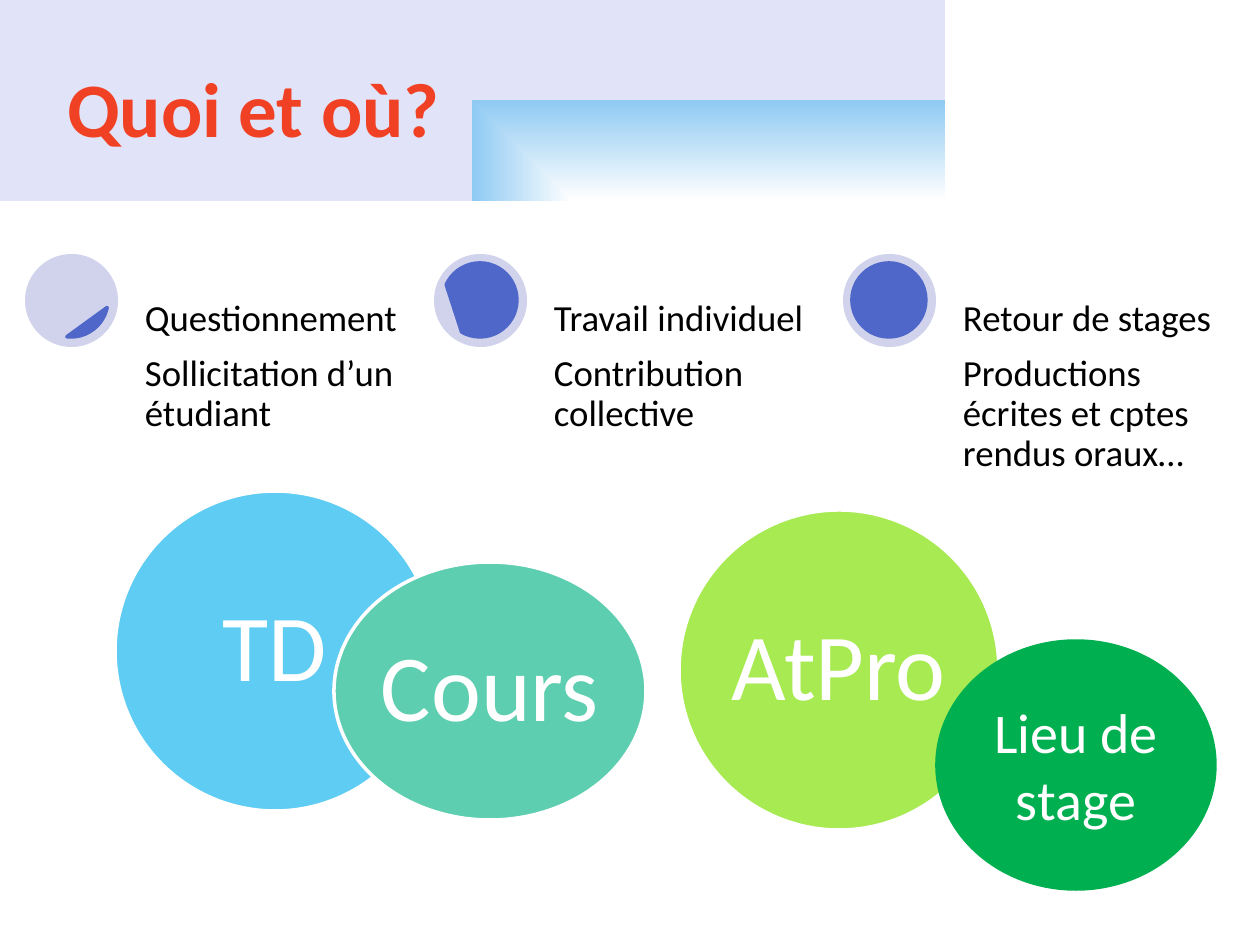
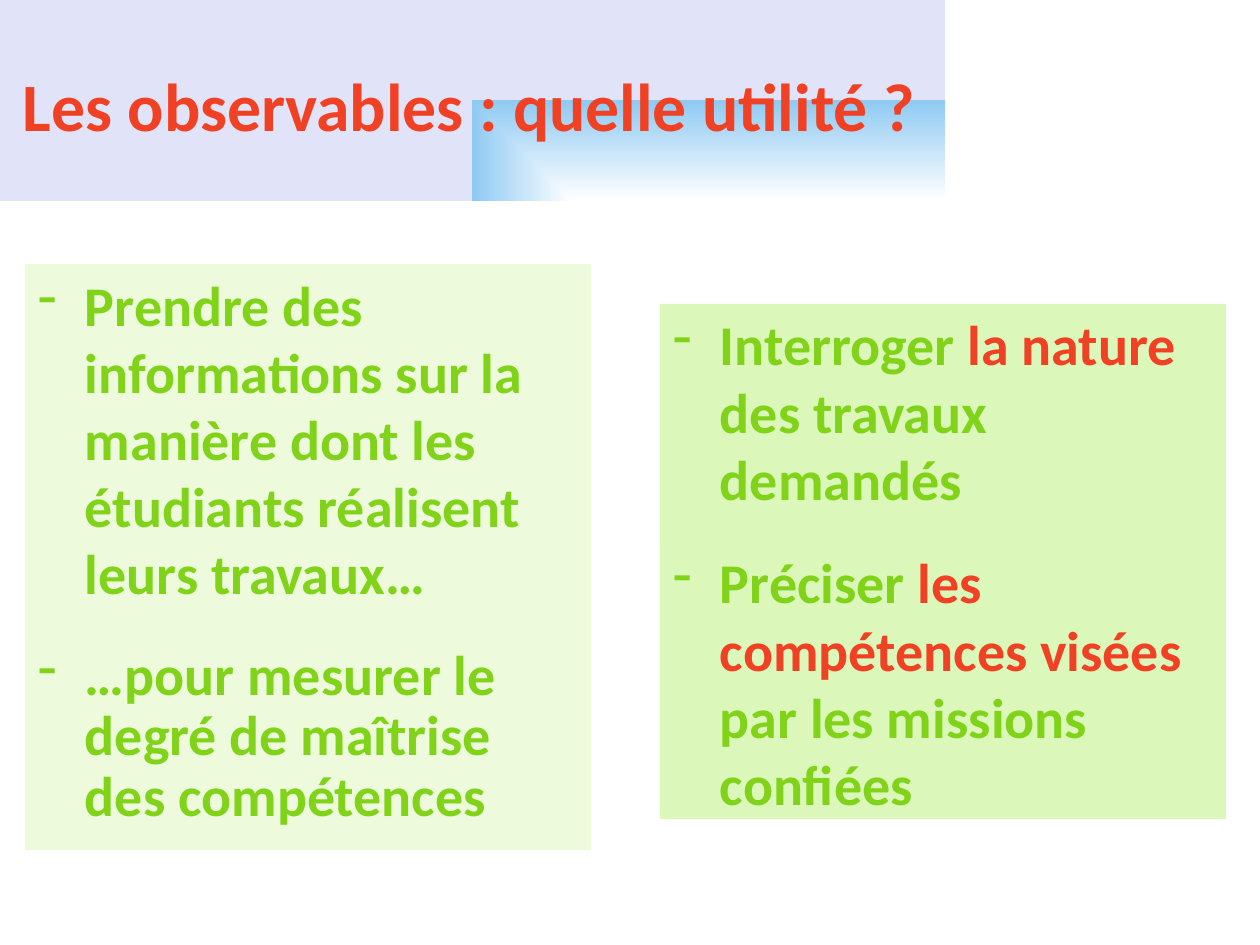
from dataclasses import dataclass

from pptx import Presentation
from pptx.dml.color import RGBColor
from pptx.enum.shapes import MSO_SHAPE
from pptx.enum.text import MSO_ANCHOR, PP_ALIGN
from pptx.oxml import parse_xml
from pptx.oxml.ns import nsdecls, qn
from pptx.util import Pt

RECTANGLE, ELLIPSE, CHORD = MSO_SHAPE.RECTANGLE, MSO_SHAPE.OVAL, MSO_SHAPE.CHORD
TOP, MIDDLE, BOTTOM = MSO_ANCHOR.TOP, MSO_ANCHOR.MIDDLE, MSO_ANCHOR.BOTTOM
LEFT, CENTER = PP_ALIGN.LEFT, PP_ALIGN.CENTER

PX = 914400 / 126
CHORD_UNITS_PER_DEGREE = 0.6
BLANK_LAYOUT = 6


@dataclass(frozen=True)
class Theme:
    font: str = "Calibri"
    white: str = "FFFFFF"
    black: str = "000000"
    accent: str = "F14124"
    green_text: str = "81D31A"
    pale_green: str = "EDFBDC"
    soft_green: str = "DCF7BA"
    sky: str = "5ECCF3"
    lime: str = "A7EA52"
    teal: str = "5DCEAF"
    deep_green: str = "00B050"
    ring: str = "D0D3EB"
    gauge: str = "4E67C8"
    band_stops: tuple = ((0, "FFFFFF"), (100, "8FCAF3"), (100, "C1C7F2"), (100, "E1E3F8"))
    title_size: float = 44
    long_title_size: float = 38.7
    circle_size: float = 54
    body_size: float = 32
    column_size: float = 21
    tight: float = 0.9
    outline: float = 2


def px(length):
    return round(length * PX)


def write(shape, text, *, theme, size, color, bold=False, align=LEFT, anchor=TOP,
          margins=(13, 6), wrap=True, line_spacing=None, dash_indent=0):
    """Fill a shape with one paragraph; text is a string or a list of (text, color) spans."""
    frame = shape.text_frame
    frame.word_wrap = wrap
    frame.vertical_anchor = anchor
    frame.margin_left = frame.margin_right = px(margins[0])
    frame.margin_top = frame.margin_bottom = px(margins[1])
    para = frame.paragraphs[0]
    if dash_indent:
        properties = para._p.get_or_add_pPr()
        properties.set("marL", str(px(dash_indent)))
        properties.set("indent", str(-px(dash_indent)))
        properties.append(parse_xml(f"<a:buFontTx {nsdecls('a')}/>"))
        properties.append(parse_xml(f"<a:buChar {nsdecls('a')} char='-'/>"))
    para.alignment = align
    if line_spacing:
        para.line_spacing = line_spacing
    spans = [(text, color)] if isinstance(text, str) else text
    for words, span_color in spans:
        span = para.add_run()
        span.text = words
        span.font.name = theme.font
        span.font.size = Pt(size)
        span.font.bold = bold
        span.font.color.rgb = RGBColor.from_string(span_color)


class SlideBuilder:
    def __init__(self, deck, theme):
        self.deck = deck
        self.theme = theme
        self.page = None

    def start(self, title, place, size):
        """Open a new page with the shared band and its title."""
        self.page = self.deck.slides.add_slide(self.deck.slide_layouts[BLANK_LAYOUT])
        self.band()
        self.text(title, place, size=size, color=self.theme.accent, bold=True, anchor=MIDDLE)

    def shape(self, kind, place, fill=None, line=None):
        shape = self.page.shapes.add_shape(kind, *map(px, place))
        shape.shadow.inherit = False
        if fill:
            shape.fill.solid()
            shape.fill.fore_color.rgb = RGBColor.from_string(fill)
        else:
            shape.fill.background()
        if line:
            shape.line.color.rgb = RGBColor.from_string(line)
            shape.line.width = Pt(self.theme.outline)
        else:
            shape.line.fill.background()
        return shape

    def band(self):
        shape = self.shape(RECTANGLE, (0, 0, 945, 201))
        stops = "".join(
            f'<a:gs pos="{percent * 1000}"><a:srgbClr val="{color}"/></a:gs>'
            for percent, color in self.theme.band_stops)
        gradient = parse_xml(
            f'<a:gradFill {nsdecls("a")} rotWithShape="1"><a:gsLst>{stops}</a:gsLst>'
            '<a:path path="rect"><a:fillToRect l="100000" t="100000"/></a:path></a:gradFill>')
        properties = shape._element.spPr
        properties.replace(properties.find(qn("a:noFill")), gradient)

    def text(self, text, place, **style):
        box = self.page.shapes.add_textbox(*map(px, place))
        write(box, text, theme=self.theme, **style)

    def circle(self, text, place, fill, line, size, **style):
        shape = self.shape(ELLIPSE, place, fill, line)
        write(shape, text, theme=self.theme, size=size, color=self.theme.white,
              align=CENTER, anchor=MIDDLE, **style)

    def gauge(self, left, top, angles):
        """Draw a ring with a chord that shows how full it is."""
        self.shape(ELLIPSE, (left, top, 93, 93), self.theme.ring)
        level = self.shape(CHORD, (left + 9, top + 9, 74, 74), self.theme.gauge, self.theme.gauge)
        for index, angle in enumerate(angles):
            level.adjustments[index] = angle * CHORD_UNITS_PER_DEGREE

    def column(self, left, top, angles, heading, detail):
        self.gauge(left, top, angles)
        style = dict(size=self.theme.column_size, color=self.theme.black,
                     margins=(8, 8), line_spacing=self.theme.tight)
        self.text(detail, (left + 112, top + 93, 276, 393), **style)
        self.text(heading, (left + 112, top, 276, 93), anchor=BOTTOM, **style)

    def panel(self, text, place, fill, line_spacing=None):
        shape = self.shape(RECTANGLE, place, fill)
        write(shape, text, theme=self.theme, size=self.theme.body_size,
              color=self.theme.green_text, bold=True, line_spacing=line_spacing, dash_indent=47)


def build_what_and_where(builder):
    theme = builder.theme
    builder.start("Quoi et où?", (54, 28, 1075, 158), theme.title_size)
    for name, place, fill in (
        ("TD", (115, 491, 320, 320), theme.sky),
        ("AtPro", (679, 510, 320, 320), theme.lime),
        ("Cours", (334, 562, 312, 258), theme.teal),
    ):
        builder.circle(name, place, fill, theme.white, theme.circle_size,
                       margins=(0, 0), wrap=False, line_spacing=theme.tight)
    columns = (
        ((11.68, 96.32), "Questionnement", "Sollicitation d’un étudiant"),
        ((204.32, 119.68), "Travail individuel", "Contribution collective"),
        ((162, 162), "Retour de stages", "Productions écrites et cptes rendus oraux…"),
    )
    for index, column in enumerate(columns):
        builder.column(25 + 409 * index, 254, *column)
    builder.circle("Lieu de stage", (937, 641, 278, 248), theme.deep_green,
                   theme.deep_green, theme.body_size)


def build_observables(builder):
    theme = builder.theme
    green, accent = theme.green_text, theme.accent
    left, right, width = 25, 660, 566
    builder.start("Les observables : quelle utilité ?", (10, 26, 968, 156), theme.long_title_size)
    builder.panel("Prendre des informations sur la manière dont les étudiants réalisent "
                  "leurs travaux…", (left, 264, width, 586), theme.pale_green)
    builder.panel([("Interroger ", green), ("la nature ", accent), ("des travaux demandés", green)],
                  (right, 304, width, 507), theme.soft_green)
    builder.panel("…pour mesurer le degré de maîtrise des compétences",
                  (left, 641, width, 208), theme.pale_green, line_spacing=theme.tight)
    builder.panel([("Préciser ", green), ("les compétences visées ", accent),
                   ("par les missions confiées", green)],
                  (right, 542, width, 277), theme.soft_green)


def main():
    deck = Presentation()
    deck.slide_width, deck.slide_height = px(1260), px(945)
    builder = SlideBuilder(deck, Theme())
    build_what_and_where(builder)
    build_observables(builder)
    deck.save("out.pptx")


if __name__ == "__main__":
    main()
